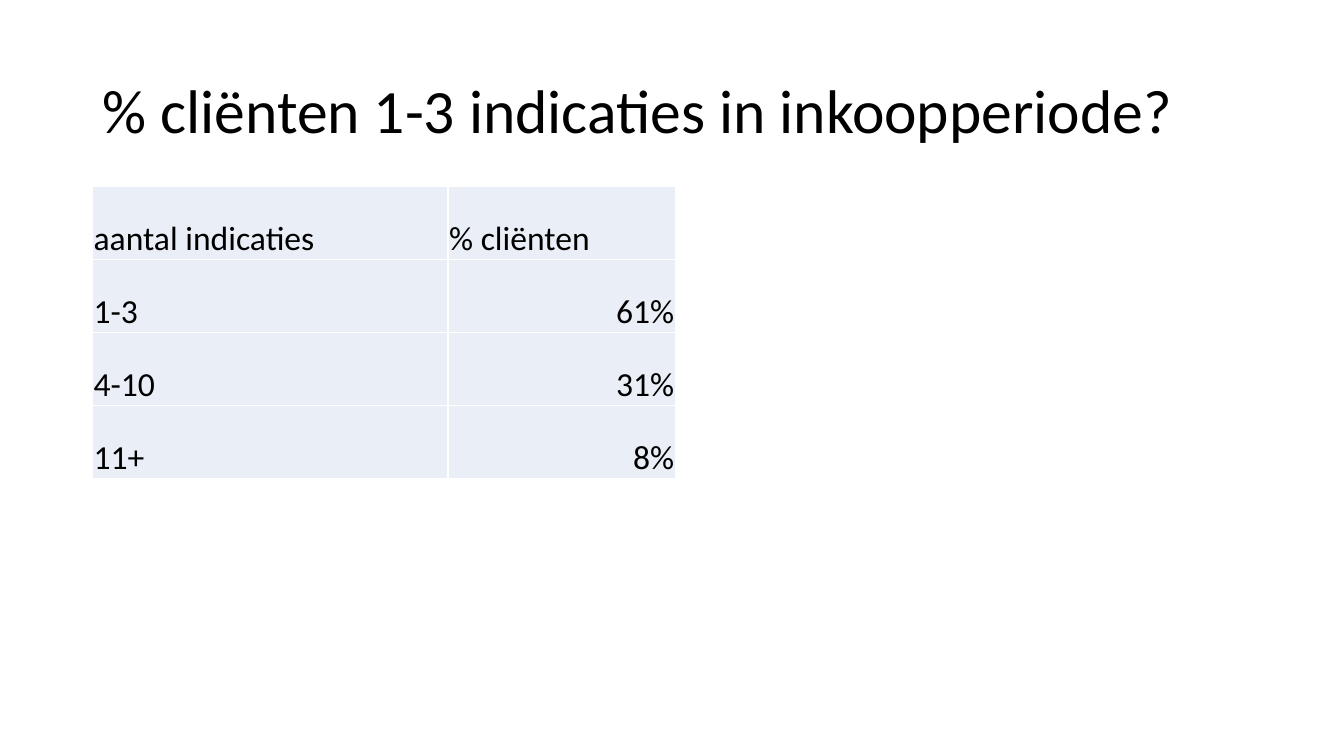
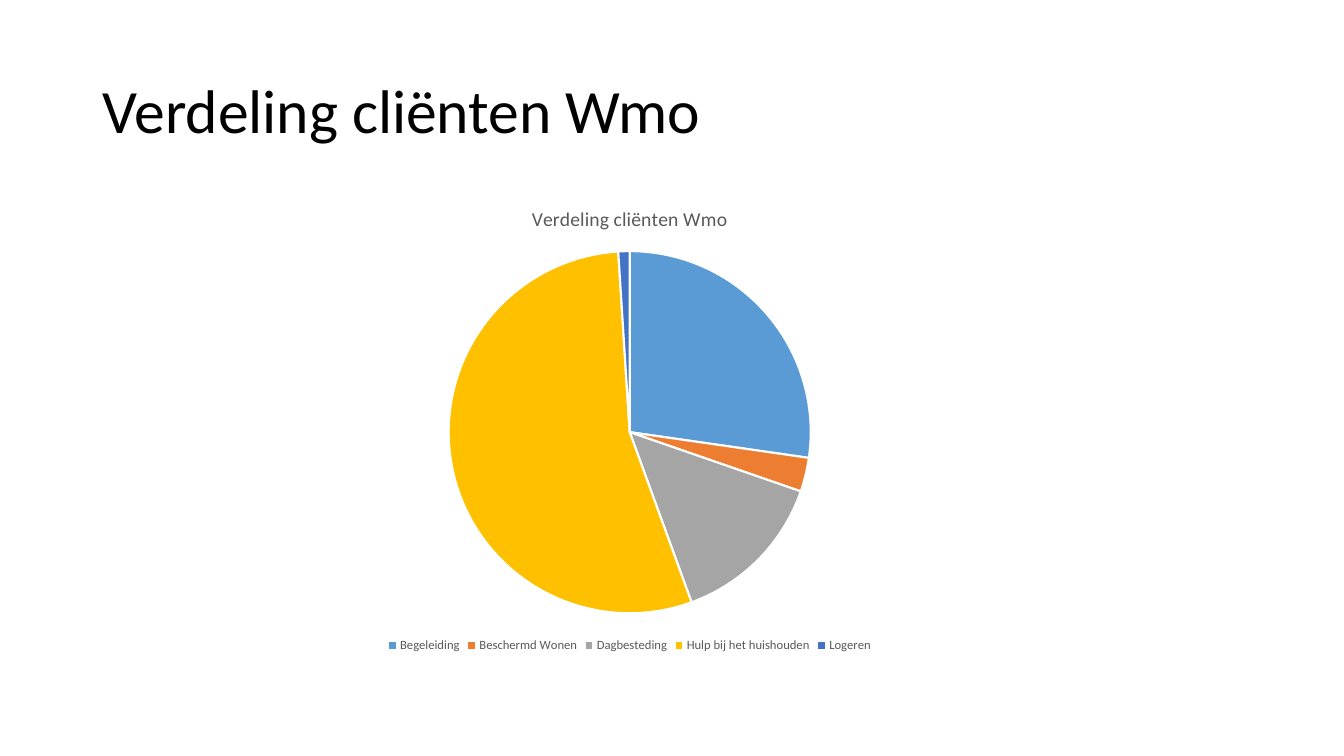
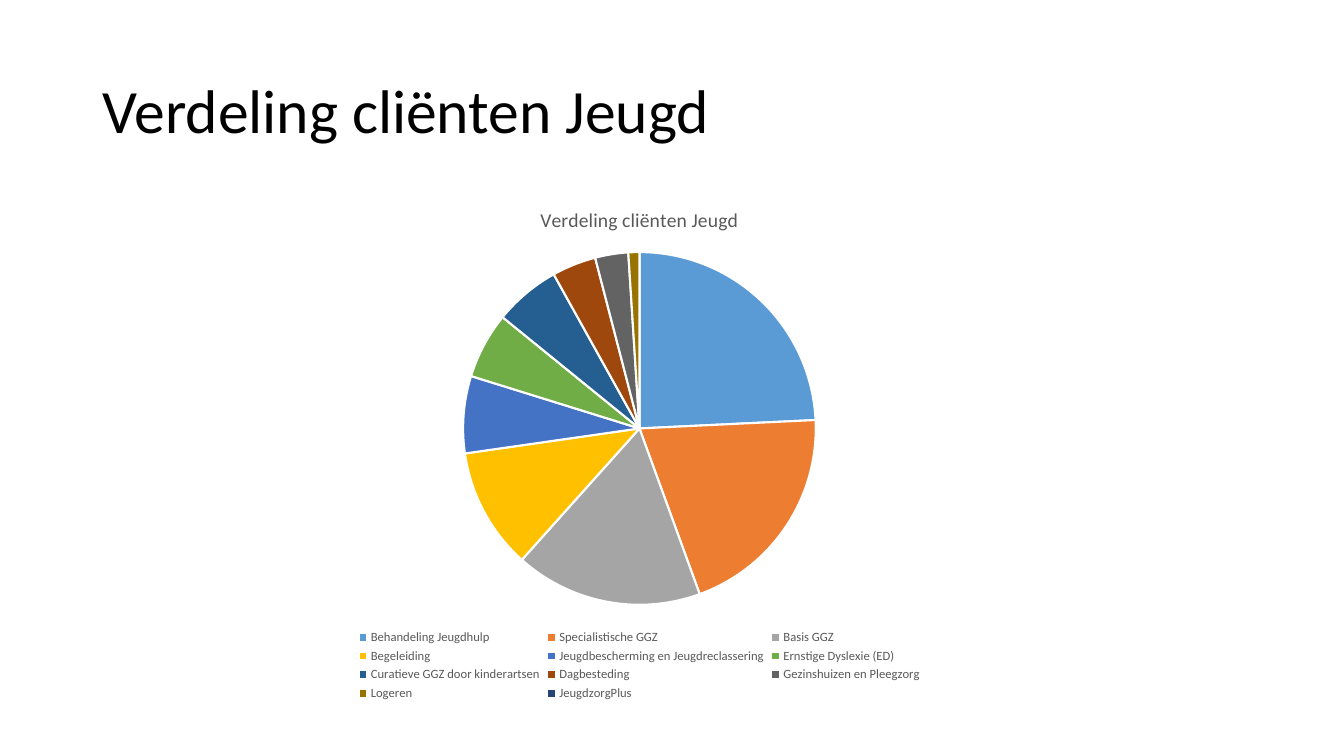
"""Build three slides on client shares: one table and two pie charts."""
from lxml.etree import SubElement
from pptx import Presentation
from pptx.chart.data import CategoryChartData
from pptx.dml.color import RGBColor
from pptx.enum.chart import XL_CHART_TYPE as ChartType, XL_LEGEND_POSITION as LegendPosition
from pptx.enum.text import MSO_ANCHOR as Anchor, PP_ALIGN as Align
from pptx.oxml import parse_xml
from pptx.oxml.ns import nsdecls, qn
from pptx.util import Cm, Pt

FONT = "Calibri"
COLORS = {"text": "000000", "muted": "595959", "cell": "EAEFF7", "line": "FFFFFF"}
SLICE_COLORS = ["5B9BD5", "ED7D31", "A5A5A5", "FFC000", "4472C4", "70AD47",
                "255E91", "9E480E", "636363", "997300", "264478"]
LEFT, CONTENT_TOP = Cm(2.33), Cm(4.7)


def style_font(font, size, color):
    font.name = FONT
    font.size = Pt(size)
    font.bold = False
    font.color.rgb = RGBColor.from_string(color)


def add_titled_slide(title):
    slide = presentation.slides.add_slide(layout)
    frame = slide.shapes.title.text_frame
    frame.vertical_anchor = Anchor.MIDDLE
    paragraph = frame.paragraphs[0]
    paragraph.alignment = Align.LEFT
    paragraph.line_spacing = 0.9
    run = paragraph.add_run()
    run.text = title
    style_font(run.font, 44, COLORS["text"])
    return slide


presentation = Presentation()
presentation.slide_width, presentation.slide_height = Cm(33.87), Cm(19.05)
layout = presentation.slide_layouts[5]
layout_title = layout.placeholders[0]
layout_title.left, layout_title.top = LEFT, Cm(1.01)
layout_title.width, layout_title.height = Cm(29.21), Cm(3.68)

rows = [("aantal indicaties", "% cliënten"), ("1-3", "61%"), ("4-10", "31%"), ("11+", "8%")]
column_widths = [Cm(8.96), Cm(5.73)]
row_height = Cm(1.84)
slide = add_titled_slide("% cliënten 1-3 indicaties in inkoopperiode?")
table = slide.shapes.add_table(len(rows), len(column_widths), LEFT, CONTENT_TOP,
                               sum(column_widths), row_height * len(rows)).table
table.first_row = table.horz_banding = False
for column, width in zip(table.columns, column_widths):
    column.width = width
for row_index, texts in enumerate(rows):
    table.rows[row_index].height = row_height
    for column_index, text in enumerate(texts):
        cell = table.cell(row_index, column_index)
        cell.vertical_anchor = Anchor.BOTTOM
        cell.margin_left = cell.margin_right = cell.margin_top = Cm(0.03)
        cell.margin_bottom = 0
        cell_properties = cell._tc.get_or_add_tcPr()
        for side in ("lnL", "lnR", "lnT", "lnB"):
            border = SubElement(cell_properties, qn(f"a:{side}"), w=str(Pt(1)))
            line_fill = SubElement(border, qn("a:solidFill"))
            SubElement(line_fill, qn("a:srgbClr"), val=COLORS["line"])
        cell.fill.solid()
        cell.fill.fore_color.rgb = RGBColor.from_string(COLORS["cell"])
        paragraph = cell.text_frame.paragraphs[0]
        is_value = row_index > 0 and column_index > 0
        paragraph.alignment = Align.RIGHT if is_value else Align.LEFT
        run = paragraph.add_run()
        run.text = text
        style_font(run.font, 24, COLORS["text"])

wmo_shares = {"Begeleiding": 27, "Beschermd Wonen": 3, "Dagbesteding": 14,
              "Hulp bij het huishouden": 54, "Logeren": 1}
youth_shares = {"Behandeling Jeugdhulp": 24, "Specialistische GGZ": 20, "Basis GGZ": 17,
                "Begeleiding": 11, "Jeugdbescherming en Jeugdreclassering": 7,
                "Ernstige Dyslexie (ED)": 6, "Curatieve GGZ door kinderartsen": 6,
                "Dagbesteding": 4, "Gezinshuizen en Pleegzorg": 3, "Logeren": 1,
                "JeugdzorgPlus": 0}
pies = [("Verdeling cliënten Wmo", wmo_shares, Cm(6.27), Cm(19.2), Cm(11.86)),
        ("Verdeling cliënten Jeugd", youth_shares, Cm(5.97), Cm(20.29), Cm(13.06))]
for title, shares, left, width, height in pies:
    slide = add_titled_slide(title)
    chart_data = CategoryChartData()
    chart_data.categories = list(shares)
    chart_data.add_series("Series 1", list(shares.values()))
    chart = slide.shapes.add_chart(ChartType.PIE, left, CONTENT_TOP, width, height, chart_data).chart
    style_font(chart.font, 10, COLORS["text"])
    chart.has_title = True
    run = chart.chart_title.text_frame.paragraphs[0].add_run()
    run.text = title
    style_font(run.font, 14, COLORS["muted"])
    chart.chart_title.include_in_layout = False
    chart.has_legend = True
    chart.legend.position = LegendPosition.BOTTOM
    chart.legend.include_in_layout = False
    style_font(chart.legend.font, 9, COLORS["muted"])
    plot = chart.plots[0]
    plot.vary_by_categories = True
    for index, color in enumerate(SLICE_COLORS[:len(shares)]):
        slice_format = plot.series[0].points[index].format
        slice_format.fill.solid()
        slice_format.fill.fore_color.rgb = RGBColor.from_string(color)
        slice_format.line.color.rgb = RGBColor.from_string(COLORS["line"])
        slice_format.line.width = Pt(1.5)

presentation.save("out.pptx")
